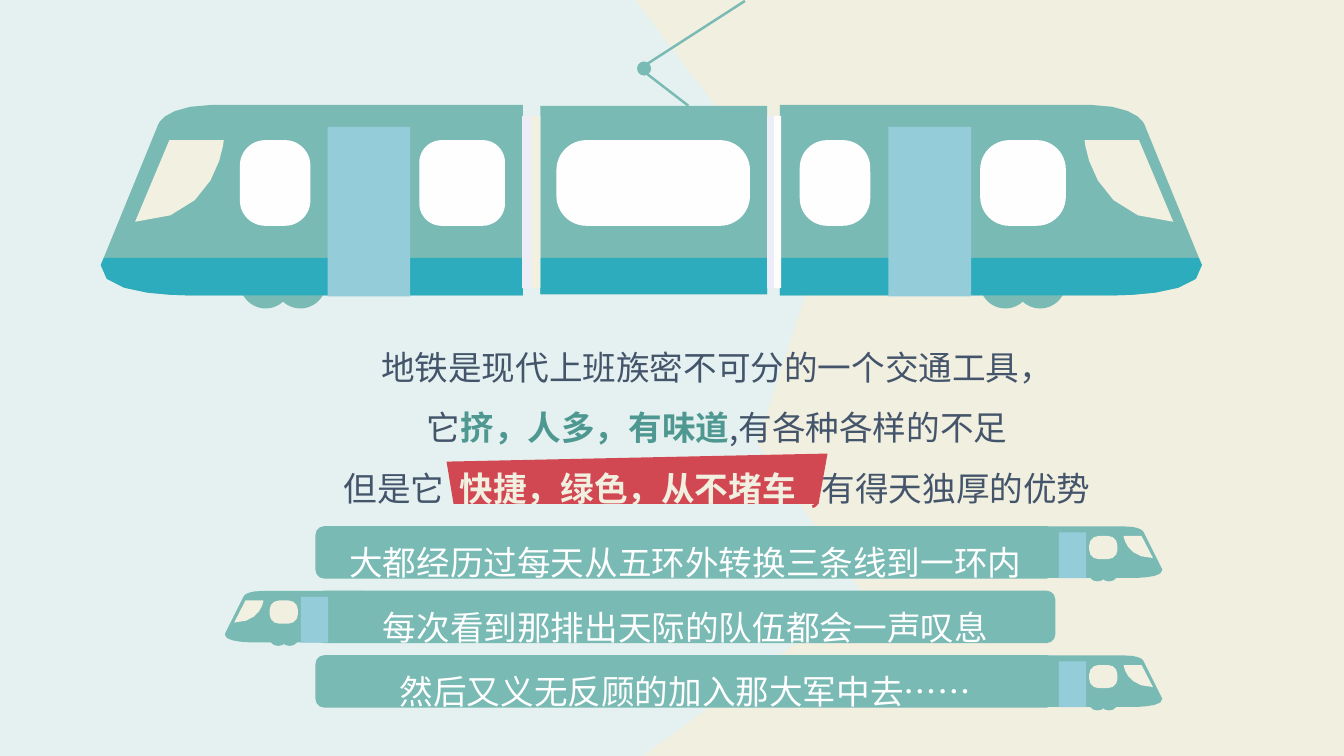
from dataclasses import dataclass
from typing import Optional

from lxml.etree import SubElement
from pptx import Presentation
from pptx.dml.color import RGBColor
from pptx.enum.shapes import MSO_SHAPE
from pptx.enum.text import MSO_ANCHOR, MSO_AUTO_SIZE, PP_ALIGN
from pptx.oxml.ns import qn
from pptx.shapes.autoshape import Shape
from pptx.shapes.shapetree import _BaseGroupShapes as ShapeTree
from pptx.text.text import TextFrame, _Paragraph as Paragraph
from pptx.util import Pt

FONT = "Noto Sans CJK SC"
COLOURS = {
    "sand": "F0EFE0", "mist": "E4F1F0", "train": "7ABAB4", "banner": "79BAB4",
    "skirt": "2CACBD", "door": "95CCDA", "glass": "FFFEFE", "windscreen": "F1F0E1",
    "lilac": "EDEDF7", "ivory": "FFFEFD", "red": "D24852", "ink": "44546A",
    "teal": "4E9891", "white": "FFFFFF",
}
Point = tuple[float, float]


@dataclass(frozen=True)
class Window:
    start: float  # distance from the nose
    width: float
    rounding: float


@dataclass(frozen=True)
class Cab:
    nose: float
    top: float
    direction: int  # 1: nose on the left, -1: nose on the right
    windows: tuple[Window, ...]
    door: float = 167.04
    wheels: float = 99.36
    windscreen: float = 22.64
    scale_x: float = 1
    scale_y: float = 1
    glass: str = "glass"
    skirt: bool = True


@dataclass(frozen=True)
class Block:
    left: float
    top: float
    width: float
    height: float
    colour: str


@dataclass(frozen=True)
class Phrase:
    text: str
    colour: str = "ink"
    bold: bool = False
    spacing: Optional[float] = None


def rgb(colour: str) -> RGBColor:
    return RGBColor.from_string(COLOURS[colour])


def paint(shape: Shape, colour: str) -> Shape:
    shape.shadow.inherit = False
    shape.fill.solid()
    shape.fill.fore_color.rgb = rgb(colour)
    shape.line.fill.background()
    return shape


def draw_block(shapes: ShapeTree, block: Block, kind: MSO_SHAPE = MSO_SHAPE.RECTANGLE,
               rounding: Optional[float] = None) -> Shape:
    shape = shapes.add_shape(kind, Pt(block.left), Pt(block.top),
                             Pt(block.width), Pt(block.height))
    if rounding is not None:
        shape.adjustments[0] = rounding
    return paint(shape, block.colour)


def draw_outline(shapes: ShapeTree, points: list[Point], colour: str,
                 close: bool = True) -> Shape:
    corners = [(Pt(x), Pt(y)) for x, y in points]
    builder = shapes.build_freeform(*corners[0])
    builder.add_line_segments(corners[1:], close=close)
    return paint(builder.convert_to_shape(), colour)


def curve(a: Point, b: Point, c: Point, d: Point, steps: int = 6) -> list[Point]:
    """Points along a cubic Bezier curve."""
    return [tuple((1 - t) ** 3 * p + 3 * (1 - t) ** 2 * t * q
                  + 3 * (1 - t) * t ** 2 * r + t ** 3 * s
                  for p, q, r, s in zip(a, b, c, d))
            for t in (i / steps for i in range(steps + 1))]


# Cab outlines, measured from the nose and the roof
NOSE, BROW, ROOF = (2.16, 115.2), (42.48, 16.56), (82.08, 0.72)
TAIL_TOP, TAIL_BOTTOM, BELLY = (303.6, 0.72), (303.6, 136.8), (70.56, 136.8)
CHIN = curve(BELLY, BELLY, (0, 138.96), NOSE)
BODY = [*curve(BROW, BROW, (44.64, 1.44), ROOF), TAIL_TOP, TAIL_BOTTOM, *CHIN]
SKIRT = [(4.32, 110.16), (303.6, 110.16), TAIL_BOTTOM, *CHIN]
# Windscreen, measured from its own lower corner
WINDSCREEN = [(24.48, 25.92),
              *curve((63.36, 25.92), (63.36, 25.92), (59.04, 83.52), (0, 84.24))]


def draw_cab(shapes: ShapeTree, cab: Cab) -> None:
    group = shapes.add_group_shape().shapes

    def place(points: list[Point], start: float = 0) -> list[Point]:
        return [(cab.nose + cab.direction * cab.scale_x * (start + x),
                 cab.top + cab.scale_y * y) for x, y in points]

    def part(start: float, top: float, width: float, height: float, colour: str) -> Block:
        (x1, y1), (x2, y2) = place([(start, top), (start + width, top + height)])
        return Block(min(x1, x2), y1, abs(x2 - x1), y2 - y1, colour)

    for i in range(2):
        wheel = part(cab.wheels + i * 24.84, 109.44, 36.72, 36.72, "train")
        draw_block(group, wheel, MSO_SHAPE.OVAL)
    draw_outline(group, place(BODY), "train")
    draw_outline(group, place(WINDSCREEN, cab.windscreen), "windscreen")
    if cab.skirt:
        draw_outline(group, place(SKIRT), "skirt")
    for window in cab.windows:
        draw_block(group, part(window.start, 25.92, window.width, 61.2, cab.glass),
                   MSO_SHAPE.ROUNDED_RECTANGLE, window.rounding)
    draw_block(group, part(cab.door, 16.56, 59.04, 120.96, "door"))


def write_line(paragraph: Paragraph, phrases: list[Phrase]) -> None:
    paragraph.alignment = PP_ALIGN.CENTER
    paragraph.line_spacing = 1.5
    for phrase in phrases:
        run = paragraph.add_run()
        run.text = phrase.text
        run.font.size = Pt(24)
        run.font.bold = phrase.bold
        run.font.color.rgb = rgb(phrase.colour)
        run.font.name = FONT
        properties = run.font._element
        SubElement(properties, qn("a:ea")).set("typeface", FONT)
        if phrase.spacing is not None:
            properties.set("spc", str(round(phrase.spacing * 100)))


def write_lines(frame: TextFrame, lines: list[list[Phrase]]) -> None:
    for i, phrases in enumerate(lines):
        write_line(frame.paragraphs[0] if i == 0 else frame.add_paragraph(), phrases)


CABS = [
    Cab(69.84, 74.16, 1, (Window(101.52, 50.4, 0.36), Window(229.68, 61.2, 0.26)),
        door=164.16, wheels=101.52, windscreen=26.64),
    Cab(860.7, 74.16, -1, (Window(99.36, 61.2, 0.34), Window(239.04, 50.4, 0.39))),
]
MIDDLE_CAR = [
    Block(385.92, 75.6, 162, 134.64, "train"),
    Block(385.92, 184.32, 162, 25.92, "skirt"),
    Block(372.96, 82.8, 6.48, 123.12, "lilac"),
    Block(379.44, 82.8, 6.48, 123.12, "windscreen"),
    Block(547.92, 82.8, 5.04, 123.12, "lilac"),
    Block(552.96, 82.8, 5.04, 123.12, "ivory"),
]
STORY = [
    [Phrase("地铁是现代上班族密不可分的一个交通工具，")],
    [Phrase("它"), Phrase("挤，人多，有味道", "teal", True), Phrase(",有各种各样的不足")],
    [Phrase("但是它"), Phrase(" ", spacing=5.4),
     Phrase("快捷，绿色，从不堵车", "sand", True), Phrase(" ", "sand", True, 5.4),
     Phrase(",", "red", True), Phrase("有得天独厚的优势")],
]
BANNERS = [
    ("大都经历过每天从五环外转换三条线到一环内", -1),
    ("每次看到那排出天际的队伍都会一声叹息", 1),
    ("然后又义无反顾的加入那大军中去……", -1),
]


def main() -> None:
    deck = Presentation()
    deck.slide_width, deck.slide_height = Pt(960), Pt(540)
    slide = deck.slides.add_slide(deck.slide_layouts[6])
    shapes = slide.shapes

    # Two-tone background
    slide.background.fill.solid()
    slide.background.fill.fore_color.rgb = rgb("sand")
    draw_outline(shapes, [(0, 0), (453.6, 0), (586.8, 175.68), (540.72, 316.8),
                          (616.32, 424.08), (459.36, 540), (0, 540)], "mist")

    # Train
    for cab in CABS:
        draw_cab(shapes, cab)
    for block in MIDDLE_CAR:
        draw_block(shapes, block)
    draw_block(shapes, Block(397.44, 100.08, 138.24, 61.2, "glass"),
               MSO_SHAPE.ROUNDED_RECTANGLE, 0.35)

    # Pantograph
    arm = draw_outline(shapes, [(532.08, 0.72), (457.2, 48.96), (491.76, 75.6)],
                       "train", close=False)
    arm.fill.background()
    arm.line.color.rgb = rgb("train")
    arm.line.width = Pt(1.75)
    draw_block(shapes, Block(455.04, 43.92, 10.08, 10.08, "train"), MSO_SHAPE.OVAL)

    # Story with its red highlight
    draw_outline(shapes, [(318.96, 329.76), (324, 360), (584.64, 360), (591.12, 324)], "red")
    story = shapes.add_textbox(Pt(232.56), Pt(229.68), Pt(559.44), Pt(181.44)).text_frame
    story.word_wrap = False
    story.auto_size = MSO_AUTO_SIZE.SHAPE_TO_FIT_TEXT
    write_lines(story, STORY)

    # Banners, each pulled by a small cab
    for i, (text, direction) in enumerate(BANNERS):
        top = 375.84 + i * 46.08
        banner = draw_block(shapes, Block(225.36, top, 528.48, 37.44, "banner"),
                            MSO_SHAPE.ROUNDED_RECTANGLE)
        banner.text_frame.word_wrap = True
        banner.text_frame.vertical_anchor = MSO_ANCHOR.MIDDLE
        write_lines(banner.text_frame, [[Phrase(text, "white")]])
        draw_cab(shapes, Cab(159.84 if direction == 1 else 831, top, direction,
                             (Window(99.36, 61.2, 0.4),), scale_x=0.33, scale_y=0.27,
                             glass="sand", skirt=False))

    deck.save("out.pptx")


if __name__ == "__main__":
    main()
